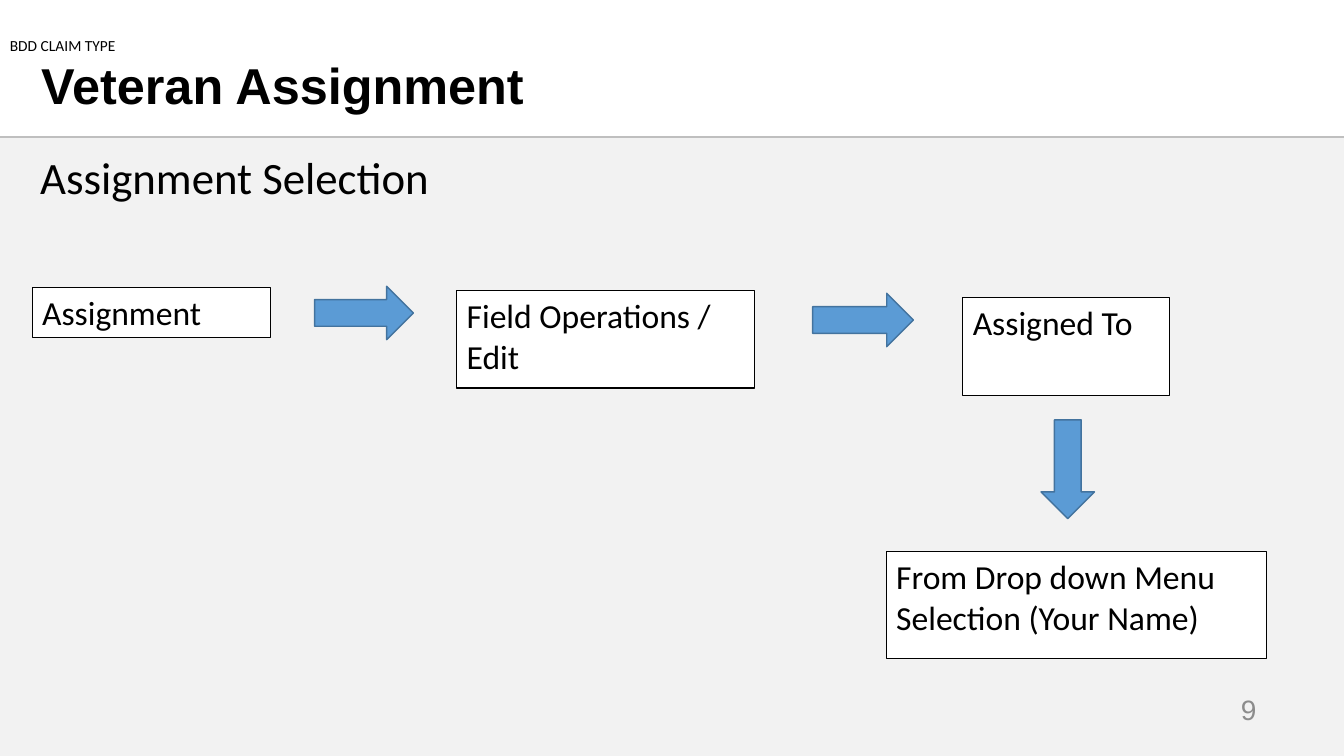
"""Build the Veteran Assignment slide with its four-step flow."""
from dataclasses import dataclass

from pptx import Presentation
from pptx import util as u
from pptx.dml.color import RGBColor
from pptx.enum import shapes, text
from pptx.oxml.ns import qn
from lxml import etree

COLORS = {
    "black": "000000",
    "white": "FFFFFF",
    "panel": "F2F2F2",
    "rule": "BFBFBF",
    "number": "8C8C8C",
    "arrow": "5B9BD5",
    "arrow_edge": "43739E",
}


@dataclass
class Area:
    left: float
    top: float
    width: float
    height: float

    def lengths(self) -> list:
        return [u.Inches(v) for v in (self.left, self.top, self.width, self.height)]


@dataclass
class Label:
    words: str
    area: Area
    size: int
    font: str = "Calibri"
    color: str = "black"
    bold: bool = False
    wrap: bool = True
    spacing: float = 1.0
    anchor: text.MSO_ANCHOR = text.MSO_ANCHOR.MIDDLE
    align: text.PP_ALIGN = text.PP_ALIGN.LEFT


@dataclass
class Step:
    lines: list[str]
    area: Area


@dataclass
class Arrow:
    area: Area
    rotation: int = 0


LABELS = [
    Label("Assignment Selection", Area(0.3, 1.5, 12.49, 6), 32,
          spacing=0.9, anchor=text.MSO_ANCHOR.TOP),
    Label("9", Area(9.56, 6.84, 3, 0.4), 20, "Arial", "number",
          align=text.PP_ALIGN.RIGHT),
    Label("Veteran Assignment", Area(0.31, 0.31, 9.25, 1.14), 36, "Arial",
          bold=True, spacing=0.9),
    Label("BDD CLAIM TYPE", Area(0, 0.2, 1.26, 0.5), 11, wrap=False),
]
STEPS = [
    Step(["Assignment"], Area(0.32, 2.85, 2.36, 0.5)),
    Step(["Field Operations / Edit"], Area(4.53, 2.88, 2.95, 0.97)),
    Step(["Assigned To"], Area(9.55, 2.95, 2.05, 0.97)),
    Step(["From Drop down Menu", "Selection (Your Name)"],
         Area(8.79, 5.47, 3.77, 1.06)),
]
ARROWS = [
    Arrow(Area(3.12, 2.84, 0.98, 0.53)),
    Arrow(Area(8.06, 2.91, 1, 0.53)),
    Arrow(Area(10.1, 4.39, 0.98, 0.53), rotation=90),
]


def rgb(name: str) -> RGBColor:
    return RGBColor.from_string(COLORS[name])


def style_font(font, name: str, size: int, color: str, bold: bool = False) -> None:
    font.name = name
    font.size = u.Pt(size)
    font.bold = bold
    font.color.rgb = rgb(color)


def draw_shape(page, kind, area: Area, fill: str, edge: str = "", weight: float = 1):
    shape = page.shapes.add_shape(kind, *area.lengths())
    shape.shadow.inherit = False
    shape.fill.solid()
    shape.fill.fore_color.rgb = rgb(fill)
    if edge:
        shape.line.color.rgb = rgb(edge)
        shape.line.width = u.Pt(weight)
    else:
        shape.line.fill.background()
    return shape


def draw_backdrop(page) -> None:
    draw_shape(page, shapes.MSO_SHAPE.RECTANGLE, Area(0, 1.37, 13.33, 6.13), "panel")
    rule = page.shapes.add_connector(
        shapes.MSO_CONNECTOR.STRAIGHT,
        u.Inches(0), u.Inches(1.36), u.Inches(13.33), u.Inches(1.36))
    rule.line.color.rgb = rgb("rule")
    rule.line.width = u.Pt(1.5)
    etree.SubElement(rule._element.spPr, qn("a:effectLst"))


def draw_label(page, label: Label) -> None:
    frame = page.shapes.add_textbox(*label.area.lengths()).text_frame
    frame.word_wrap = label.wrap
    frame.vertical_anchor = label.anchor
    para = frame.paragraphs[0]
    para.text = label.words
    para.alignment = label.align
    para.line_spacing = label.spacing
    style_font(para.font, label.font, label.size, label.color, label.bold)


def draw_step(page, step: Step) -> None:
    box = draw_shape(page, shapes.MSO_SHAPE.RECTANGLE, step.area, "white", "black", 0.75)
    frame = box.text_frame
    frame.word_wrap = True
    frame.vertical_anchor = text.MSO_ANCHOR.TOP
    frame.text = "\n".join(step.lines)
    for para in frame.paragraphs:
        para.alignment = text.PP_ALIGN.LEFT
        style_font(para.font, "Calibri", 24, "black")


def draw_arrow(page, arrow: Arrow) -> None:
    shape = draw_shape(page, shapes.MSO_SHAPE.RIGHT_ARROW, arrow.area,
                       "arrow", "arrow_edge")
    shape.rotation = arrow.rotation


def main() -> None:
    deck = Presentation()
    deck.slide_width, deck.slide_height = u.Inches(13.33), u.Inches(7.5)
    page = deck.slides.add_slide(deck.slide_layouts[6])
    draw_backdrop(page)
    for label in LABELS:
        draw_label(page, label)
    for step in STEPS:
        draw_step(page, step)
    for arrow in ARROWS:
        draw_arrow(page, arrow)
    deck.save("out.pptx")


if __name__ == "__main__":
    main()
